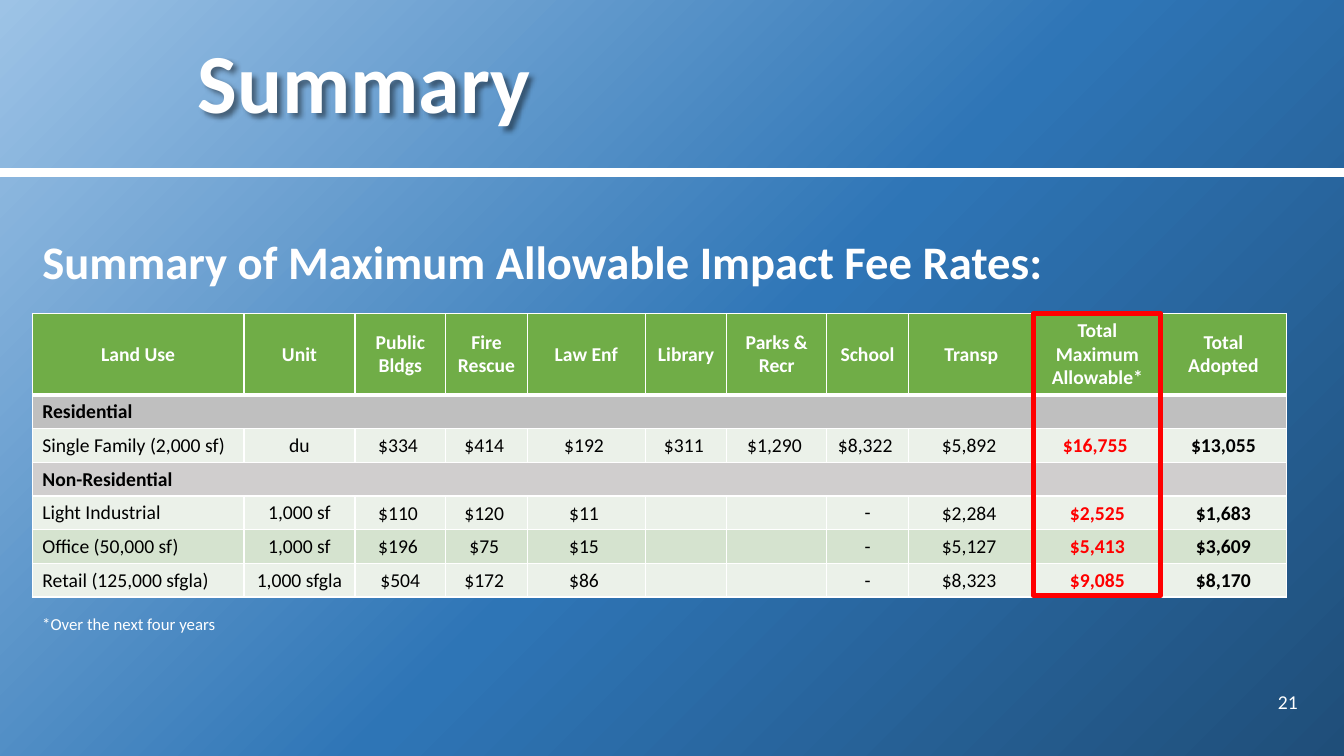
"""Build the impact fee summary slide."""
from dataclasses import dataclass

from lxml.etree import SubElement
from pptx import Presentation
from pptx.dml.color import RGBColor
from pptx.enum.shapes import MSO_CONNECTOR, MSO_SHAPE
from pptx.enum.text import MSO_ANCHOR, MSO_AUTO_SIZE, PP_ALIGN
from pptx.oxml import parse_xml
from pptx.oxml.ns import nsdecls, qn
from pptx.util import Inches, Pt


@dataclass(frozen=True)
class Theme:
    font: str = "Calibri"
    white: str = "FFFFFF"
    black: str = "000000"
    red: str = "FF0000"
    header: str = "70AD47"
    residential: str = "BFBFBF"
    commercial: str = "D0CECE"
    pale: str = "EBF1E9"
    band: str = "D5E3CF"
    backdrop: tuple = ((0, "9DC3E6"), (53, "2E75B6"), (100, "1F4E79"))
    title_size: float = 60
    heading_size: float = 33.3
    table_size: float = 14
    note_size: float = 12


THEME = Theme()
COLUMNS = (2.1, 1.1, 0.9, 0.81, 1.17, 0.81, 0.99, 0.81, 1.25, 1.25, 1.25)
HEADER_HEIGHT, ROW_HEIGHT = 0.81, 0.33
MAXIMUM, ADOPTED = 9, 10
TABLE_LEFT, TABLE_TOP = 0.32, 3.11
ROWS = (
    (THEME.header, ("Land Use", "Unit", "Public Bldgs", "Fire Rescue", "Law Enf", "Library",
                    "Parks & Recr", "School", "Transp", "Total Maximum Allowable*",
                    "Total Adopted")),
    (THEME.residential, ("Residential",)),
    (THEME.pale, ("Single Family (2,000 sf)", "du", "$334 ", "$414 ", "$192 ", "$311 ",
                  "$1,290 ", "$8,322 ", "$5,892 ", "$16,755 ", "$13,055")),
    (THEME.commercial, ("Non-Residential",)),
    (THEME.pale, ("Light Industrial", "1,000 sf", "$110 ", "$120 ", "$11 ", "", "", "-",
                  "$2,284 ", "$2,525", "$1,683")),
    (THEME.band, ("Office (50,000 sf)", "1,000 sf", "$196 ", "$75 ", "$15 ", "", "", "-",
                  "$5,127 ", "$5,413", "$3,609")),
    (THEME.pale, ("Retail (125,000 sfgla)", "1,000 sfgla", "$504", "$172 ", "$86 ", "", "", "-",
                  "$8,323 ", "$9,085", "$8,170")),
)


class SlideBuilder:
    """Draw styled elements on one slide."""

    def __init__(self, page, theme):
        self.page = page
        self.theme = theme

    def background(self):
        stops = "".join(
            f'<a:gs pos="{place * 1000}"><a:srgbClr val="{color}"/></a:gs>'
            for place, color in self.theme.backdrop)
        self.page.element.cSld.insert(0, parse_xml(
            f'<p:bg {nsdecls("p", "a")}><p:bgPr><a:gradFill rotWithShape="1">'
            f'<a:gsLst>{stops}</a:gsLst><a:path path="circle">'
            '<a:fillToRect r="100000" b="100000"/></a:path></a:gradFill>'
            '<a:effectLst/></p:bgPr></p:bg>'))

    def span(self, para, text, size, color, bold=False):
        span = para.add_run()
        span.text = text
        span.font.name = self.theme.font
        span.font.size = Pt(size)
        span.font.bold = bold
        span.font.color.rgb = RGBColor.from_string(color)

    def place(self, box, left, top, width, height):
        box.left, box.top = Inches(left), Inches(top)
        box.width, box.height = Inches(width), Inches(height)

    def title(self, text, *frame):
        box = self.page.shapes.title
        self.place(box, *frame)
        box.text_frame.auto_size = MSO_AUTO_SIZE.NONE
        box.text_frame.vertical_anchor = MSO_ANCHOR.MIDDLE
        para = box.text_frame.paragraphs[0]
        para.alignment = PP_ALIGN.LEFT
        para.line_spacing = 0.9
        self.span(para, text, self.theme.title_size, self.theme.white, True)
        box.element.spPr.append(parse_xml(
            f'<a:effectLst {nsdecls("a")}><a:outerShdw blurRad="38100" dist="38100" '
            'dir="2700000" algn="tl"><a:srgbClr val="000000"><a:alpha val="43000"/>'
            '</a:srgbClr></a:outerShdw></a:effectLst>'))

    def heading(self, text, *frame):
        box = self.page.placeholders[1]
        self.place(box, *frame)
        box.text_frame.auto_size = MSO_AUTO_SIZE.NONE
        para = box.text_frame.paragraphs[0]
        para.line_spacing = 1.1
        para.space_before = Pt(0)
        properties = para._p.get_or_add_pPr()
        properties.set("marL", "0")
        properties.set("indent", "0")
        SubElement(properties, qn("a:buNone"))
        self.span(para, text, self.theme.heading_size, self.theme.white, True)

    def text(self, text, size, frame, alignment=PP_ALIGN.LEFT, anchor=MSO_ANCHOR.TOP):
        box = self.page.shapes.add_textbox(*map(Inches, frame))
        box.text_frame.word_wrap = True
        box.text_frame.vertical_anchor = anchor
        para = box.text_frame.paragraphs[0]
        para.alignment = alignment
        self.span(para, text, size, self.theme.white)

    def divider(self, left, right, top):
        line = self.page.shapes.add_connector(
            MSO_CONNECTOR.STRAIGHT, Inches(left), Inches(top), Inches(right), Inches(top))
        line.line.color.rgb = RGBColor.from_string(self.theme.white)
        line.line.width = Pt(6)
        SubElement(line.element.spPr, qn("a:effectLst"))

    def outline(self, *frame):
        box = self.page.shapes.add_shape(MSO_SHAPE.RECTANGLE, *map(Inches, frame))
        box.shadow.inherit = False
        box.fill.background()
        box.line.color.rgb = RGBColor.from_string(self.theme.red)
        box.line.width = Pt(4)

    def borders(self, cell, row):
        properties = cell._tc.get_or_add_tcPr()
        thick = {(0, "B"), (1, "T")}
        for side in "LRTB":
            width = Pt(3 if (row, side) in thick else 1)
            properties.append(parse_xml(
                f'<a:ln{side} {nsdecls("a")} w="{width}"><a:solidFill>'
                f'<a:srgbClr val="{self.theme.white}"/></a:solidFill></a:ln{side}>'))

    def cell(self, cell, row, column, text, fill, section):
        self.borders(cell, row)
        cell.fill.solid()
        cell.fill.fore_color.rgb = RGBColor.from_string(fill)
        cell.vertical_anchor = MSO_ANCHOR.MIDDLE
        para = cell.text_frame.paragraphs[0]
        size = self.theme.table_size
        if not text:
            SubElement(para._p, qn("a:endParaRPr")).set("sz", str(size * 100))
            return
        if text.startswith("$"):
            cell.margin_left = cell.margin_right = cell.margin_top = Inches(0.01)
            cell.margin_bottom = 0
        header = row == 0
        centred = header or column > 0
        para.alignment = PP_ALIGN.CENTER if centred else PP_ALIGN.LEFT
        color = self.theme.white if header else (
            self.theme.red if column == MAXIMUM else self.theme.black)
        self.span(para, text, size, color, header or section or column >= MAXIMUM)

    def table(self, rows, left, top):
        height = HEADER_HEIGHT + ROW_HEIGHT * (len(rows) - 1)
        table = self.page.shapes.add_table(
            len(rows), len(COLUMNS), Inches(left), Inches(top),
            Inches(sum(COLUMNS)), Inches(height)).table
        for column, width in zip(table.columns, COLUMNS):
            column.width = Inches(width)
        for row, (fill, texts) in enumerate(rows):
            table.rows[row].height = Inches(ROW_HEIGHT if row else HEADER_HEIGHT)
            section = len(texts) == 1
            for column in range(len(COLUMNS)):
                text = texts[column] if column < len(texts) else ""
                self.cell(table.cell(row, column), row, column, text, fill, section)
            if section:
                table.cell(row, 0).merge(table.cell(row, MAXIMUM))


def main():
    deck = Presentation()
    deck.slide_width, deck.slide_height = Inches(13.33), Inches(7.5)
    builder = SlideBuilder(deck.slides.add_slide(deck.slide_layouts[1]), THEME)
    builder.background()
    builder.divider(-0.02, 13.33, 1.71)
    builder.text("21", THEME.table_size, (12.08, 6.76, 0.89, 0.4),
                 PP_ALIGN.RIGHT, MSO_ANCHOR.MIDDLE)
    builder.heading("Summary of Maximum Allowable Impact Fee Rates:", 0.32, 2.2, 12.78, 0.69)
    builder.table(ROWS, TABLE_LEFT, TABLE_TOP)
    builder.outline(TABLE_LEFT + sum(COLUMNS[:MAXIMUM]) - 0.01, TABLE_TOP, 1.26, 2.8)
    builder.title("Summary", 1.86, 0, 11.1, 1.71)
    builder.text("*Over the next four years", THEME.note_size, (0.32, 6.04, 10.98, 0.3))
    deck.save("out.pptx")


if __name__ == "__main__":
    main()
